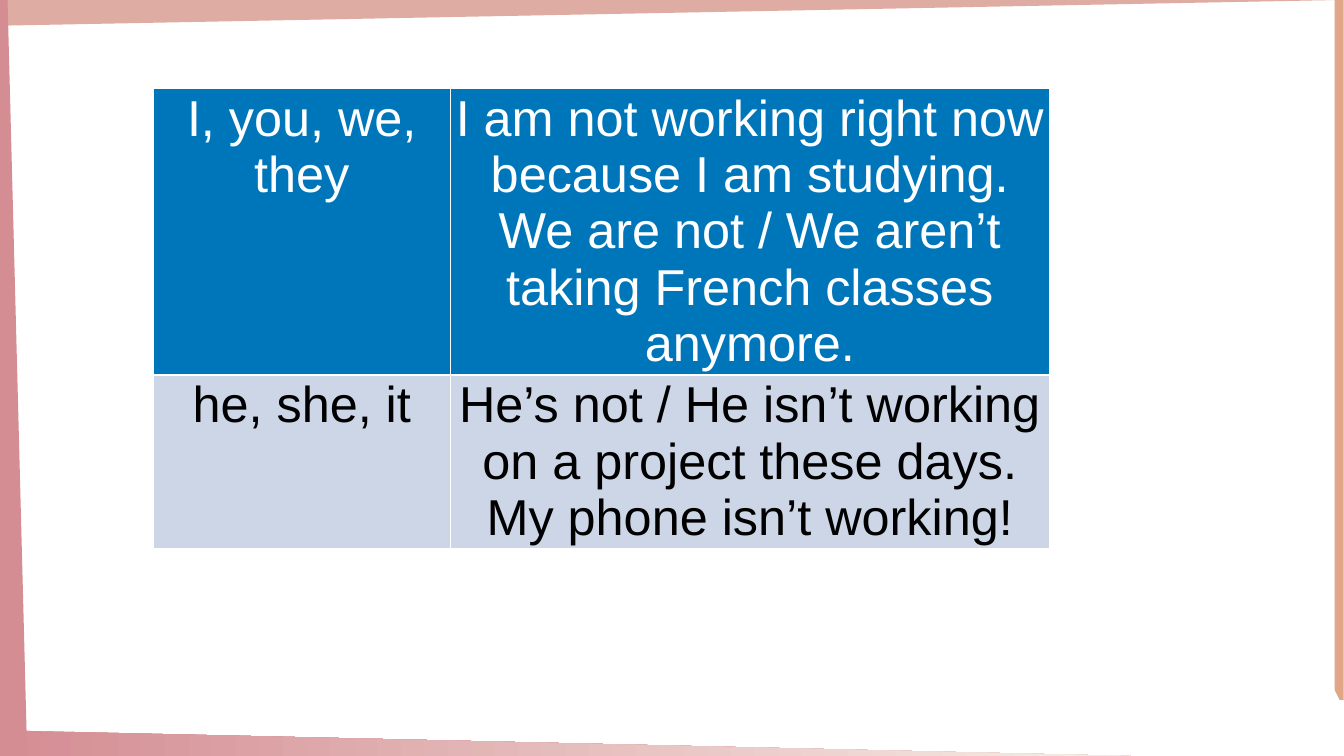
import pptx
import pptx.dml.color
import pptx.enum.shapes
import pptx.enum.text
import pptx.oxml
import pptx.oxml.ns
import pptx.util

Inches = pptx.util.Inches
Pt = pptx.util.Pt
RGBColor = pptx.dml.color.RGBColor

WHITE = RGBColor(0xFF, 0xFF, 0xFF)
BLACK = RGBColor(0, 0, 0)
BLUE = RGBColor(0x00, 0x76, 0xBA)
PALE = RGBColor(0xCC, 0xD6, 0xE7)
ROSE = RGBColor(0xD4, 0x8D, 0x93)
PINK = RGBColor(0xDE, 0xAC, 0xA2)
TAN = RGBColor(0xDF, 0xA6, 0x87)
CREAM = RGBColor(0xF7, 0xED, 0xE6)

WIDE, HIGH = 26.67, 15
TOP = [(0, 0), (0, 0.51), (26.56, 0)]
BASE = [(0, 15), (0, 14.49), (22.45, 15)]
LEFT = [(0, 0), (0, 15), (0.54, 15), (0.15, 0)]
NOTCH = [(21.3, 12.97), (22.52, 12.97), (23.12, 11.94), (24.29, 11.94),
         (24.9, 13), (26.11, 12.97), (26.65, 14.02), (26.3, 14.68),
         (22.3, 14.68), (21.9, 13.99)]

COLS = [5.88, 11.9]
# Each row: height, fill, text colour, bottom border in points, cells
ROWS = [
    (5.68, BLUE, WHITE, 3, [
        ["I, you, we, they"],
        ["I am not working right now because I am studying.",
         "We are not / We aren’t taking French classes anymore."]]),
    (3.45, PALE, BLACK, 1, [
        ["he, she, it"],
        ["He’s not / He isn’t working on a project these days.",
         "My phone isn’t working!"]]),
]


def paint(shape, *tones):
    """Fill with one colour, or with a left-to-right blend of two."""
    shape.shadow.inherit = False
    shape.line.fill.background()
    if len(tones) == 1:
        shape.fill.solid()
        shape.fill.fore_color.rgb = tones[0]
        return
    shape.fill.gradient()
    shape.fill.gradient_angle = 0
    for stop, tone in zip(shape.fill.gradient_stops, tones):
        stop.color.rgb = tone


def add_patch(slide, points, *tones):
    spots = [(Inches(x), Inches(y)) for x, y in points]
    pen = slide.shapes.build_freeform(*spots[0], scale=1.0)
    pen.add_line_segments(spots[1:], close=True)
    paint(pen.convert_to_shape(), *tones)


def add_strip(slide):
    kind = pptx.enum.shapes.MSO_SHAPE.RECTANGLE
    strip = slide.shapes.add_shape(
        kind, Inches(19.63), Inches(6.85), Inches(13.89), Inches(0.18))
    strip.rotation = 270
    paint(strip, TAN)


def add_edges(cell, base):
    props = cell._tc.get_or_add_tcPr()
    for spot, (side, size) in enumerate(
            [("L", 1), ("R", 1), ("T", 1), ("B", base)]):
        props.insert(spot, pptx.oxml.parse_xml(
            f'<a:ln{side} {pptx.oxml.ns.nsdecls("a")} w="{Pt(size)}">'
            f'<a:solidFill><a:srgbClr val="{WHITE}"/></a:solidFill>'
            f'</a:ln{side}>'))


def fill_cell(cell, lines, fill, ink, base):
    cell.fill.solid()
    cell.fill.fore_color.rgb = fill
    add_edges(cell, base)
    cell.text_frame.text = "\n".join(lines)
    form = {"size": Pt(72), "name": "Arial", "bold": False}
    for para in cell.text_frame.paragraphs:
        para.alignment = pptx.enum.text.PP_ALIGN.CENTER
        for run in para.runs:
            for key, value in form.items():
                setattr(run.font, key, value)
            run.font.color.rgb = ink


def add_grid(slide):
    high = sum(row[0] for row in ROWS)
    grid = slide.shapes.add_table(
        len(ROWS), len(COLS), Inches(3.05), Inches(1.75),
        Inches(sum(COLS)), Inches(high)).table
    for col, wide in zip(grid.columns, COLS):
        col.width = Inches(wide)
    for row, (tall, fill, ink, base, texts) in zip(grid.rows, ROWS):
        row.height = Inches(tall)
        for cell, lines in zip(row.cells, texts):
            fill_cell(cell, lines, fill, ink, base)


def main():
    deck = pptx.Presentation()
    deck.slide_width, deck.slide_height = Inches(WIDE), Inches(HIGH)
    slide = deck.slides.add_slide(deck.slide_layouts[6])
    slide.background.fill.solid()
    slide.background.fill.fore_color.rgb = WHITE
    add_strip(slide)
    add_patch(slide, TOP, PINK)
    add_patch(slide, BASE, ROSE, CREAM)
    add_patch(slide, LEFT, ROSE)
    add_patch(slide, NOTCH, WHITE)
    add_grid(slide)
    deck.save("out.pptx")


if __name__ == "__main__":
    main()
